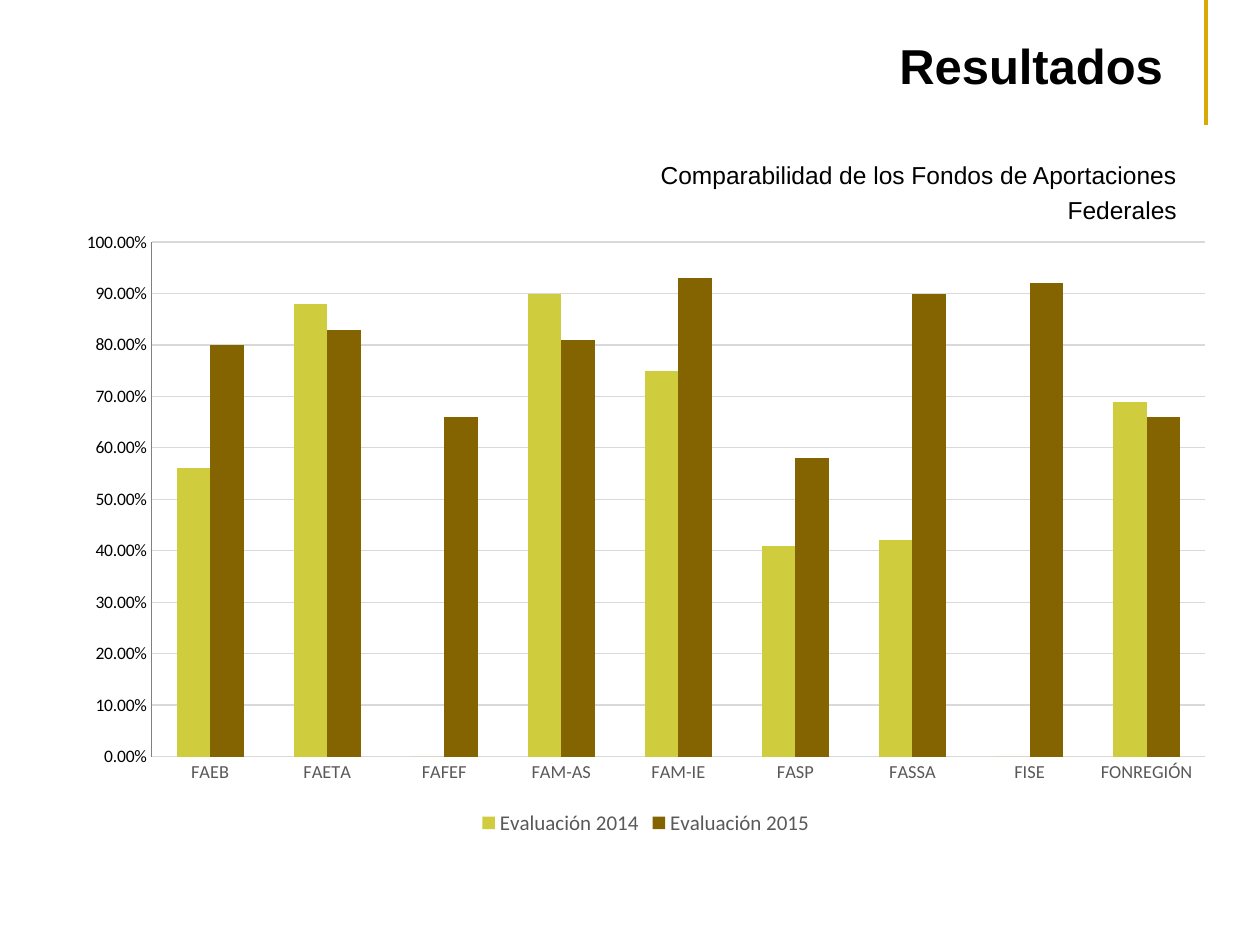
from dataclasses import dataclass

from lxml import etree
from pptx import Presentation
from pptx.chart.data import CategoryChartData
from pptx.dml.color import RGBColor as RGB
from pptx.enum.chart import XL_CHART_TYPE as ChartType
from pptx.enum.chart import XL_LEGEND_POSITION as LegendPos
from pptx.enum.chart import XL_TICK_MARK as Tick
from pptx.enum.shapes import MSO_CONNECTOR as Connector
from pptx.enum.text import MSO_ANCHOR as Anchor
from pptx.enum.text import MSO_AUTO_SIZE as AutoSize
from pptx.enum.text import PP_ALIGN as Align
from pptx.oxml.ns import qn
from pptx.util import Inches, Pt


@dataclass(frozen=True)
class Theme:
    text_font: str = "Arial"
    chart_font: str = "Calibri"
    ink: RGB = RGB(0x00, 0x00, 0x00)
    muted: RGB = RGB(0x59, 0x59, 0x59)
    grid: RGB = RGB(0xD9, 0xD9, 0xD9)
    axis: RGB = RGB(0x80, 0x80, 0x80)
    accent: RGB = RGB(0xD9, 0xA9, 0x06)
    series: tuple = (RGB(0xCF, 0xCD, 0x3D), RGB(0x84, 0x64, 0x00))
    title: Pt = Pt(28)
    subtitle: Pt = Pt(14)
    values: Pt = Pt(10)
    categories: Pt = Pt(10.5)
    legend: Pt = Pt(12)


THEME = Theme()

FUNDS = ["FAEB", "FAETA", "FAFEF", "FAM-AS", "FAM-IE", "FASP", "FASSA",
         "FISE", "FONREGIÓN"]
RESULTS = {
    "Evaluación 2014": [0.56, 0.88, 0, 0.9, 0.75, 0.41, 0.42, 0, 0.69],
    "Evaluación 2015": [0.8, 0.83, 0.66, 0.81, 0.93, 0.58, 0.9, 0.92, 0.66],
}


def set_font(font, name, size, color, bold=False):
    font.name, font.size, font.bold = name, size, bold
    font.color.rgb = color


def fill_placeholder(sp, box, text, size, anchor, bold=False):
    """Move a placeholder into box and give it right-aligned text."""
    sp.left, sp.top, sp.width, sp.height = map(Inches, box)
    tf = sp.text_frame
    tf.text = text
    tf.word_wrap = True
    tf.auto_size = AutoSize.NONE
    tf.vertical_anchor = anchor
    p = tf.paragraphs[0]
    p.alignment = Align.RIGHT
    p.space_before = Pt(0)
    set_font(p.runs[0].font, THEME.text_font, size, THEME.ink, bold)
    return p


def add_heading(slide, box):
    """Title with the vertical accent line to its right."""
    left, top, width, height = box
    fill_placeholder(slide.shapes.title, box, "Resultados", THEME.title,
                     Anchor.MIDDLE, bold=True)
    x = Inches(left + width + 0.24)
    line = slide.shapes.add_connector(Connector.STRAIGHT, x, Inches(0),
                                      x, Inches(0.99))
    line.line.color.rgb = THEME.accent
    line.line.width = Pt(2)
    etree.SubElement(line._element.spPr, qn("a:effectLst"))


def add_subtitle(slide, box):
    """Body text without bullet or indent."""
    p = fill_placeholder(slide.placeholders[1], box,
                         "Comparabilidad de los Fondos de Aportaciones Federales",
                         THEME.subtitle, Anchor.TOP)
    p.line_spacing = 1.2
    pPr = p._p.get_or_add_pPr()
    pPr.set("marL", "0")
    pPr.set("indent", "0")
    etree.SubElement(pPr, qn("a:buNone"))


def set_plot_layout(chart, **fractions):
    """Fix the inner plot area as fractions of the chart."""
    plot_area = chart._chartSpace.chart.plotArea
    layout = plot_area.find(qn("c:layout"))
    if layout is None:
        layout = etree.Element(qn("c:layout"))
        plot_area.insert(0, layout)
    manual = etree.SubElement(layout, qn("c:manualLayout"))
    settings = {"layoutTarget": "inner", "xMode": "edge", "yMode": "edge",
                **fractions}
    for tag, val in settings.items():
        etree.SubElement(manual, qn(f"c:{tag}")).set("val", str(val))


def add_results_chart(slide, box):
    """Clustered columns comparing both evaluations by fund."""
    data = CategoryChartData(number_format="0.00%")
    data.categories = FUNDS
    for name, values in RESULTS.items():
        data.add_series(name, values)
    chart = slide.shapes.add_chart(ChartType.COLUMN_CLUSTERED,
                                   *map(Inches, box), data).chart
    set_font(chart.font, THEME.chart_font, THEME.values, THEME.ink)
    chart.has_title = False
    set_plot_layout(chart, x=0.076, y=0.035, w=0.904, h=0.83)

    # Columns
    plot = chart.plots[0]
    plot.gap_width, plot.overlap = 150, 0
    plot.vary_by_categories = False
    for series, color in zip(plot.series, THEME.series):
        series.format.fill.solid()
        series.format.fill.fore_color.rgb = color

    # Axes
    cat, val = chart.category_axis, chart.value_axis
    for axis in (cat, val):
        axis.major_tick_mark = axis.minor_tick_mark = Tick.NONE
    cat.format.line.fill.background()
    set_font(cat.tick_labels.font, THEME.chart_font, THEME.categories,
             THEME.muted)
    val.minimum_scale, val.maximum_scale, val.major_unit = 0, 1, 0.1
    val.format.line.color.rgb = THEME.axis
    val.tick_labels.number_format = "0.00%"
    val.tick_labels.number_format_is_linked = False
    set_font(val.tick_labels.font, THEME.chart_font, THEME.values, THEME.ink)
    val.major_gridlines.format.line.color.rgb = THEME.grid
    val.major_gridlines.format.line.width = Pt(0.75)

    # Legend
    chart.has_legend = True
    chart.legend.position = LegendPos.BOTTOM
    chart.legend.include_in_layout = False
    set_font(chart.legend.font, THEME.chart_font, THEME.legend, THEME.muted)


def main():
    prs = Presentation()
    prs.slide_width, prs.slide_height = Inches(10), Inches(7.5)
    slide = prs.slides.add_slide(prs.slide_layouts[1])
    add_heading(slide, (3.19, 0.21, 6.14, 0.61))
    add_subtitle(slide, (4.75, 1.17, 4.69, 1.39))
    add_results_chart(slide, (0.5, 1.75, 9.25, 4.92))
    prs.save("out.pptx")


if __name__ == "__main__":
    main()
